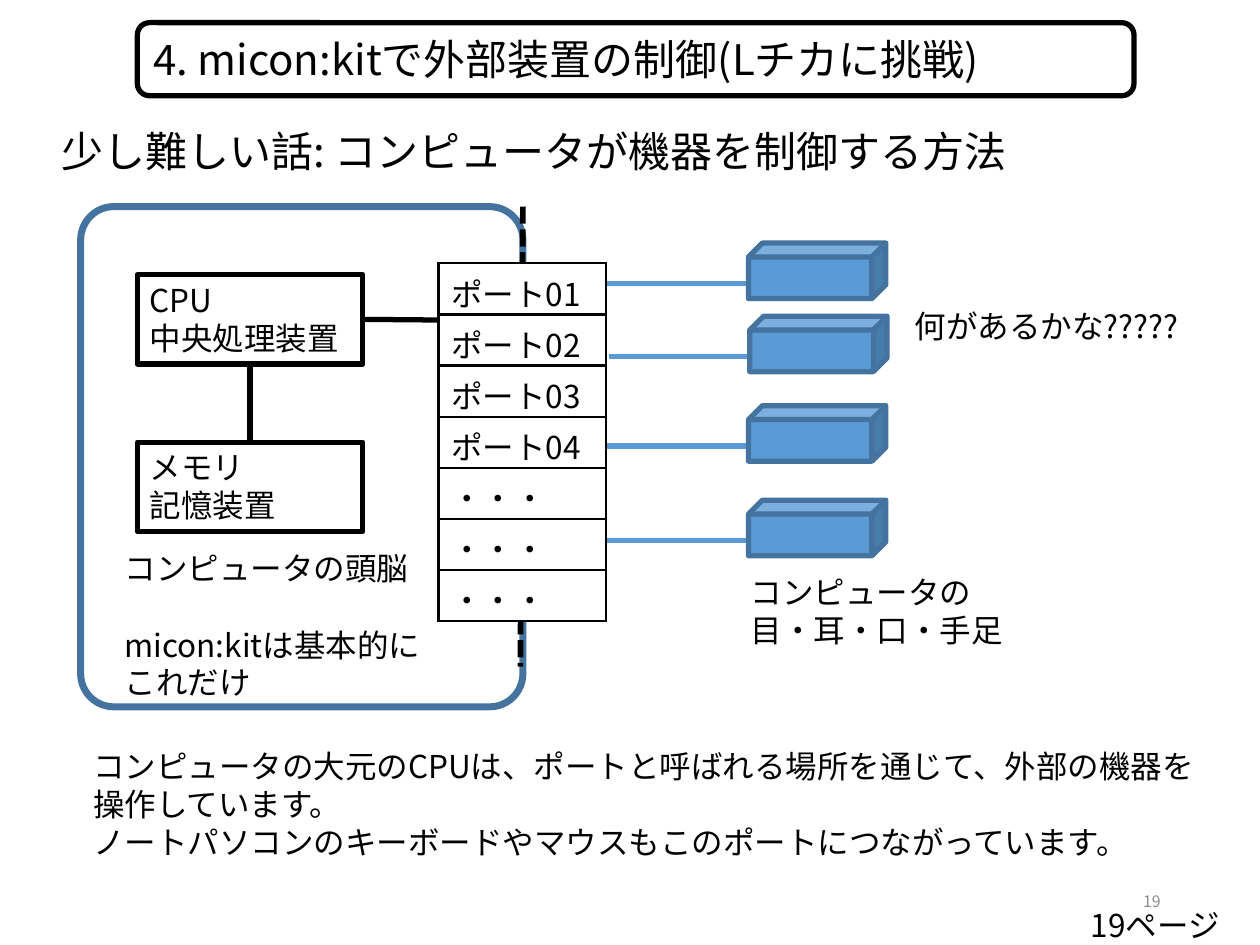
from dataclasses import dataclass

from lxml import etree
from pptx import Presentation
from pptx.dml.color import RGBColor
from pptx.enum import dml, shapes, text
from pptx.oxml import ns
from pptx.util import Inches, Pt


@dataclass(frozen=True)
class Theme:
    font: str = "Noto Sans CJK JP"
    black: str = "000000"
    white: str = "FFFFFF"
    gray: str = "8C8C8C"
    blue: str = "5B9BD5"
    dark_blue: str = "43739E"
    heading: float = 24
    body: float = 18
    small: float = 9
    line: float = 3
    dash_line: float = 3.25
    frame_line: float = 4
    cell_line: float = 1.5


THEME = Theme()

# Each text is a list of paragraphs; each paragraph is a list of lines.
TITLE = [["4. micon:kitで外部装置の制御(Lチカに挑戦)"]]
SUBTITLE = [["少し難しい話: コンピュータが機器を制御する方法"]]
CPU = [["CPU", "中央処理装置"]]
MEMORY = [["メモリ", "記憶装置"]]
BRAIN = [["コンピュータの頭脳"], ["micon:kitは基本的にこれだけ"]]
LIMBS = [["コンピュータの目・耳・口・手足"]]
QUESTION = [["何があるかな?????"]]
EXPLANATION = [
    ["コンピュータの大元のCPUは、ポートと呼ばれる場所を通じて、外部の機器を操作しています。"],
    ["ノートパソコンのキーボードやマウスもこのポートにつながっています。"],
]
PORTS = ["ポート01", "ポート02", "ポート03", "ポート04"] + ["・・・"] * 3
DEVICES = [(5.94, 1.93), (5.95, 2.51), (5.94, 3.22), (5.94, 3.97)]

FRAME_BOX = (0.64, 1.64, 3.51, 3.97)
TABLE_BOX = (3.48, 2.09, 1.33, 2.84)
DEVICE_SIZE = (1.09, 0.44)
WIRE_LENGTH, WIRE_DROP = 1.12, 0.32


def color(value):
    return RGBColor.from_string(value)


def write_text(frame, paragraphs, size=THEME.body, ink=THEME.black,
               align=text.PP_ALIGN.LEFT, gap=0):
    """Fill a text frame; gap is the space in points between paragraphs."""
    for index, lines in enumerate(paragraphs):
        paragraph = frame.add_paragraph() if index else frame.paragraphs[0]
        paragraph.alignment = align
        if index:
            paragraph.space_before = Pt(gap)
        for number, line in enumerate(lines):
            if number:
                paragraph.add_line_break()
            run = paragraph.add_run()
            run.text = line
            run.font.size = Pt(size)
            run.font.color.rgb = color(ink)
            run.font.name = THEME.font
            east_asian = etree.SubElement(run.font._element, ns.qn("a:ea"))
            east_asian.set("typeface", THEME.font)


def add_label(slide, box, paragraphs, anchor=text.MSO_ANCHOR.TOP, **style):
    label = slide.shapes.add_textbox(*map(Inches, box))
    label.text_frame.word_wrap = True
    label.text_frame.vertical_anchor = anchor
    write_text(label.text_frame, paragraphs, **style)
    return label


def add_box(parent, kind, box, line=THEME.black, width=THEME.line, fill=None):
    shape = parent.shapes.add_shape(kind, *map(Inches, box))
    shape.shadow.inherit = False
    if fill:
        shape.fill.solid()
        shape.fill.fore_color.rgb = color(fill)
    else:
        shape.fill.background()
    shape.line.color.rgb = color(line)
    shape.line.width = Pt(width)
    return shape


def add_text_box(slide, kind, box, paragraphs, anchor=text.MSO_ANCHOR.TOP, **style):
    shape = add_box(slide, kind, box)
    shape.text_frame.word_wrap = True
    shape.text_frame.vertical_anchor = anchor
    write_text(shape.text_frame, paragraphs, **style)
    return shape


def add_wire(parent, start, end, ink=THEME.black, width=THEME.line):
    wire = parent.shapes.add_connector(
        shapes.MSO_CONNECTOR.STRAIGHT, *map(Inches, start + end))
    wire.line.color.rgb = color(ink)
    wire.line.width = Pt(width)
    etree.SubElement(wire._element.spPr, ns.qn("a:effectLst"))
    return wire


def add_cell_borders(cell):
    properties = cell._tc.get_or_add_tcPr()
    for index, side in enumerate(("lnL", "lnR", "lnT", "lnB")):
        border = etree.Element(ns.qn(f"a:{side}"), w=str(Pt(THEME.cell_line)))
        fill = etree.SubElement(border, ns.qn("a:solidFill"))
        etree.SubElement(fill, ns.qn("a:srgbClr"), val=THEME.black)
        properties.insert(index, border)


def add_port_table(slide):
    table = slide.shapes.add_table(len(PORTS), 1, *map(Inches, TABLE_BOX)).table
    table.first_row = table.horz_banding = False
    for row, port in enumerate(PORTS):
        table.rows[row].height = Inches(TABLE_BOX[3] / len(PORTS))
        cell = table.cell(row, 0)
        cell.fill.solid()
        cell.fill.fore_color.rgb = color(THEME.white)
        add_cell_borders(cell)
        write_text(cell.text_frame, [[port]])


def add_device(slide, left, top):
    """Group a device cube with the wire that leads to its port."""
    group = slide.shapes.add_group_shape()
    y = top + WIRE_DROP
    add_wire(group, (left - WIRE_LENGTH, y), (left, y), THEME.blue)
    add_box(group, shapes.MSO_SHAPE.CUBE, (left, top) + DEVICE_SIZE,
            THEME.dark_blue, fill=THEME.blue)


def add_computer(slide):
    rectangle = shapes.MSO_SHAPE.RECTANGLE
    cpu = add_text_box(slide, rectangle, (1.09, 2.18, 1.79, 0.71), CPU)
    memory = add_text_box(slide, rectangle, (1.09, 3.51, 1.79, 0.71), MEMORY)
    memory_bus = add_wire(slide, (1.99, 2.89), (1.99, 3.51))
    memory_bus.begin_connect(cpu, 2)
    memory_bus.end_connect(memory, 0)
    port_bus = add_wire(slide, (2.88, 2.54), (TABLE_BOX[0], 2.54))
    port_bus.begin_connect(cpu, 3)
    boundary = add_wire(slide, (4.15, 1.64), (4.13, 5.29), width=THEME.dash_line)
    boundary.line.dash_style = dml.MSO_LINE.SQUARE_DOT
    add_port_table(slide)


def main():
    presentation = Presentation()
    presentation.slide_width, presentation.slide_height = Inches(10), Inches(7.5)
    slide = presentation.slides.add_slide(presentation.slide_layouts[6])
    rounded, middle = shapes.MSO_SHAPE.ROUNDED_RECTANGLE, text.MSO_ANCHOR.MIDDLE

    frame = add_box(slide, rounded, FRAME_BOX, THEME.dark_blue, THEME.frame_line)
    frame.adjustments[0] = 0.075
    add_label(slide, (8.56, 7.14, 1.44, 0.4), [["19ページ"]])
    add_text_box(slide, rounded, (1.09, 0.18, 7.91, 0.58), TITLE, middle,
                 size=THEME.heading)
    subtitle = add_label(slide, (0.14, 0.95, 9.82, 0.5), SUBTITLE, size=THEME.heading)
    subtitle.text_frame.margin_left = Inches(0.35)
    add_label(slide, (7.06, 6.95, 2.25, 0.4), [["19"]], middle, size=THEME.small,
              ink=THEME.gray, align=text.PP_ALIGN.RIGHT)

    add_computer(slide)
    add_label(slide, (0.89, 4.31, 2.57, 1.31), BRAIN, gap=22)
    add_label(slide, (5.86, 4.5, 2.33, 0.71), LIMBS)
    add_label(slide, (7.16, 2.39, 2.72, 0.4), QUESTION)
    for left, top in DEVICES:
        add_device(slide, left, top)
    add_label(slide, (0.64, 5.88, 8.95, 1.01), EXPLANATION)
    presentation.save("out.pptx")


if __name__ == "__main__":
    main()
